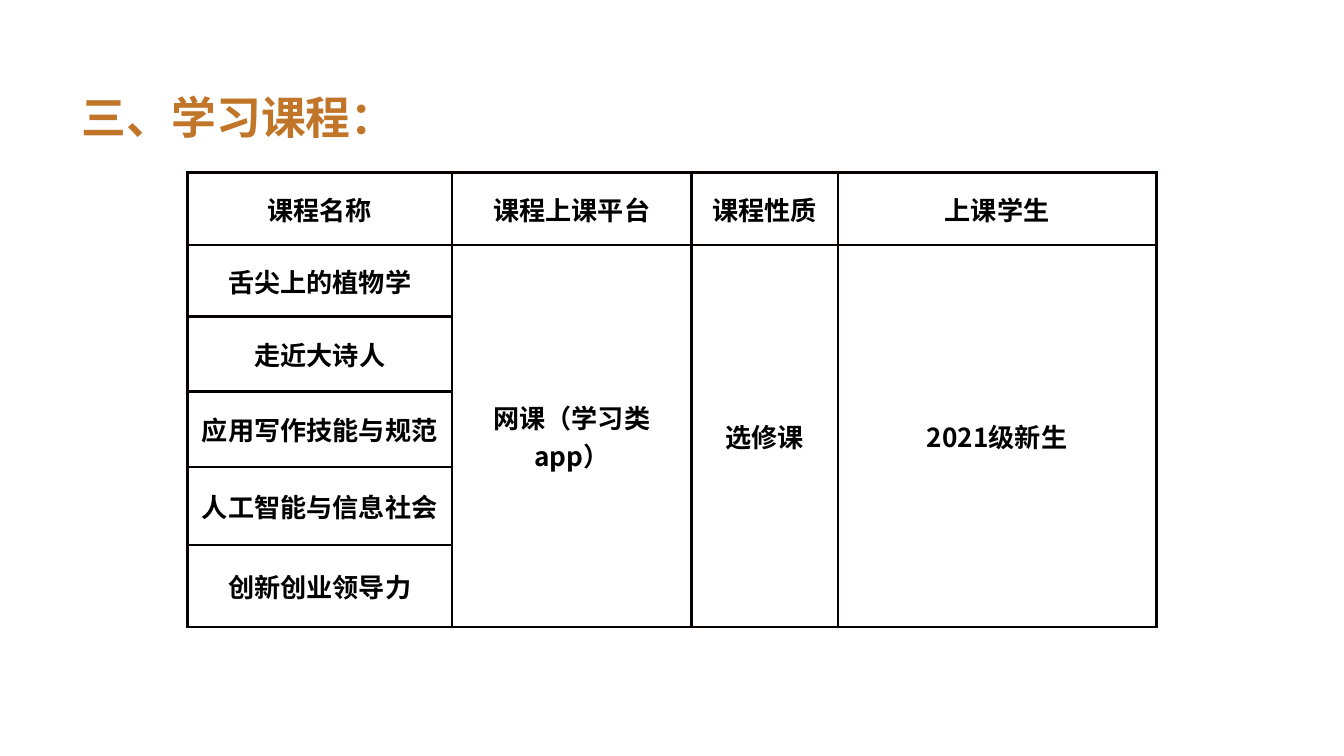
from dataclasses import dataclass

from lxml.etree import SubElement
from pptx import Presentation
from pptx.dml.color import RGBColor
from pptx.enum.text import MSO_ANCHOR, MSO_AUTO_SIZE, PP_ALIGN
from pptx.oxml.ns import qn
from pptx.util import Emu, Pt


@dataclass(frozen=True)
class Theme:
    face: str = "Noto Sans CJK SC"
    accent: str = "C17529"
    ink: str = "000000"
    rule: str = "080000"
    head: int = 24
    body: int = 14
    line: float = 1.5


THEME = Theme()
SCALE = 4572  # EMU in one px, 200 px to the inch

HEADS = ["课程名称", "课程上课平台", "课程性质", "上课学生"]
COURSES = ["舌尖上的植物学", "走近大诗人", "应用写作技能与规范",
           "人工智能与信息社会", "创新创业领导力"]
SHARED = ["网课（学习类app）", "选修课", "2021级新生"]
COLS = [394, 356, 218, 474]
ROWS = [108, 106, 112, 112, 116, 122]


def px(n):
    return Emu(n * SCALE)


def style(para, size, color):
    font = para.font
    font.size, font.bold = Pt(size), True
    font.color.rgb = RGBColor.from_string(color)
    font.name = THEME.face
    # East Asian face follows the Latin one
    props = para._p.pPr.find(qn("a:defRPr"))
    SubElement(props, qn("a:ea"), typeface=THEME.face)


def border(cell):
    props = cell._tc.get_or_add_tcPr()
    for side in ("lnL", "lnR", "lnT", "lnB"):
        line = SubElement(props, qn(f"a:{side}"), w=str(Pt(THEME.line)))
        fill = SubElement(line, qn("a:solidFill"))
        SubElement(fill, qn("a:srgbClr"), val=THEME.rule)


def add_title(slide, left, top, width, height):
    title = slide.shapes.title
    title.left, title.top = px(left), px(top)
    title.width, title.height = px(width), px(height)
    frame = title.text_frame
    frame.text = "三、学习课程："
    frame.word_wrap = False
    frame.auto_size = MSO_AUTO_SIZE.SHAPE_TO_FIT_TEXT
    frame.vertical_anchor = MSO_ANCHOR.TOP
    para = frame.paragraphs[0]
    para.alignment = PP_ALIGN.LEFT
    para.line_spacing = Pt(35)
    style(para, THEME.head, THEME.accent)


def add_grid(slide, left, top):
    table = slide.shapes.add_table(
        len(ROWS), len(COLS), px(left), px(top),
        px(sum(COLS)), px(sum(ROWS))).table
    table.first_row = table.horz_banding = False
    for col, width in zip(table.columns, COLS):
        col.width = px(width)
    for row, height in zip(table.rows, ROWS):
        row.height = px(height)

    # Headings, course names, and the values shared by all courses
    for i, text in enumerate(HEADS):
        table.cell(0, i).text = text
    for i, text in enumerate(COURSES, 1):
        table.cell(i, 0).text = text
    for i, text in enumerate(SHARED, 1):
        table.cell(1, i).text = text
        table.cell(1, i).merge(table.cell(len(COURSES), i))

    # Common cell look
    for cell in table.iter_cells():
        border(cell)
        cell.fill.background()
        cell.margin_left = cell.margin_right = px(14)
        cell.margin_top = cell.margin_bottom = 0
        cell.vertical_anchor = MSO_ANCHOR.MIDDLE
        para = cell.text_frame.paragraphs[0]
        para.alignment = PP_ALIGN.CENTER
        style(para, THEME.body, THEME.ink)


def main():
    deck = Presentation()
    deck.slide_width, deck.slide_height = px(2000), px(1125)
    slide = deck.slides.add_slide(deck.slide_layouts[5])
    add_title(slide, 102, 106, 512, 110)
    add_grid(slide, 279, 257)
    deck.save("out.pptx")


if __name__ == "__main__":
    main()
